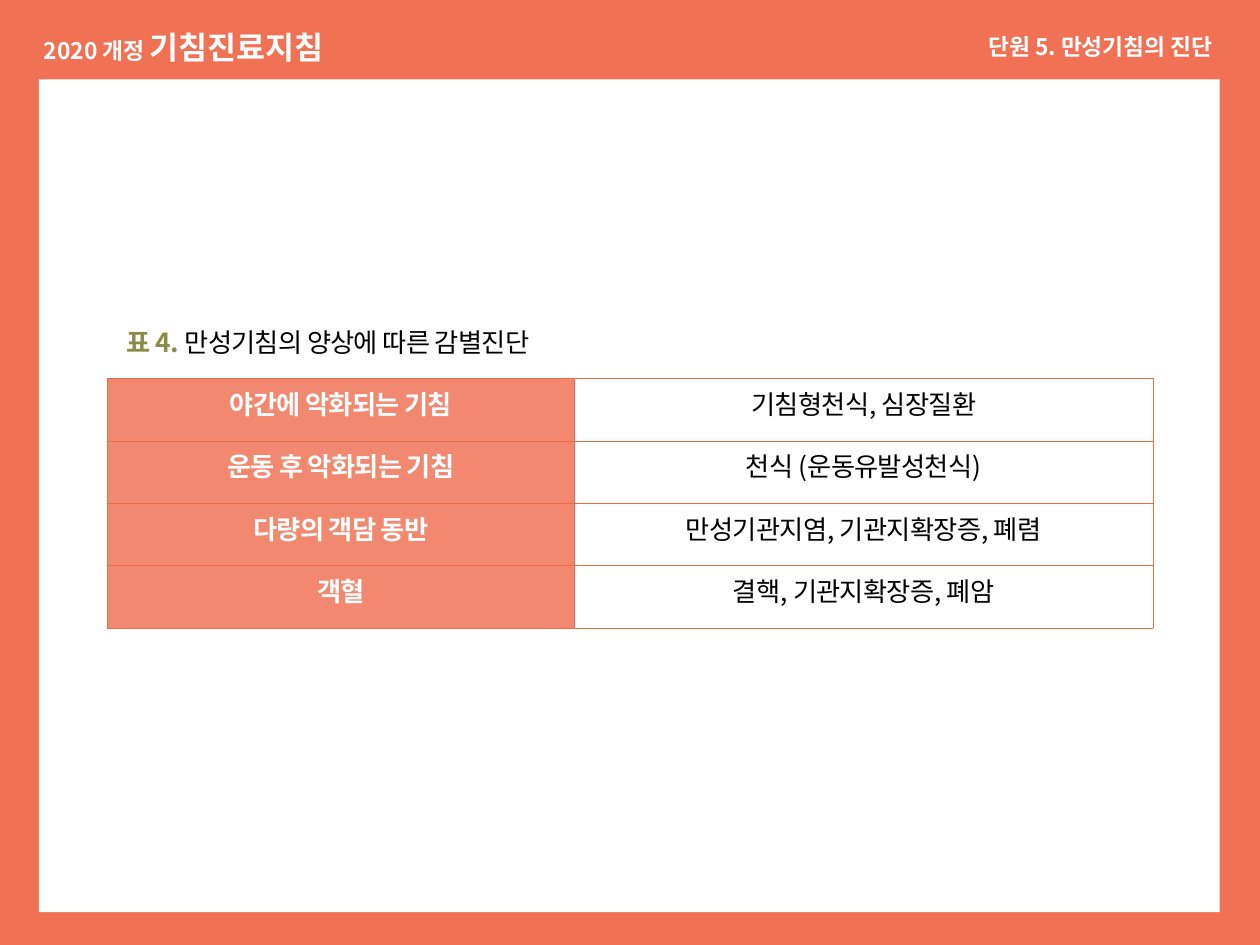
"""Build a slide with a table of differential diagnoses for chronic cough."""
from lxml import etree
from pptx import Presentation, util as u
from pptx.dml.color import RGBColor
from pptx.enum import shapes, text
from pptx.oxml.ns import qn

FONT = "Noto Sans CJK KR"
COLORS = {"frame": "F07154", "label": "F2886F", "line": "EF6A4B",
          "white": "FFFFFF", "black": "000000", "olive": "8B8C45"}
GUIDE = [("2020 개정 ", 13, "white", True), ("기침진료지침", 18, "white", True)]
CHAPTER = [("단원 5. 만성기침의 진단", 13, "white", True)]
CAPTION = [("표 4.", 15, "olive", True),
           (" 만성기침의 양상에 따른 감별진단", 15, "black", False)]
DIAGNOSES = [
    ("야간에 악화되는 기침", "기침형천식, 심장질환"),
    ("운동 후 악화되는 기침", "천식 (운동유발성천식)"),
    ("다량의 객담 동반", "만성기관지염, 기관지확장증, 폐렴"),
    ("객혈", "결핵, 기관지확장증, 폐암"),
]
COLUMNS = (3.71, 4.59)
ROW_HEIGHT = 0.494
ALIGN = text.PP_ALIGN


def color(name):
    return RGBColor.from_string(COLORS[name])


def write(para, spans, align, spacing=None):
    para.alignment = align
    for words, size, shade, bold in spans:
        span = para.add_run()
        span.text = words
        font = span.font
        font.name, font.size, font.bold = FONT, u.Pt(size), bold
        font.color.rgb = color(shade)
        props = span._r.get_or_add_rPr()
        etree.SubElement(props, qn("a:ea"), typeface=FONT)
        if spacing is not None:
            props.set("spc", str(spacing))


def add_heading(page, place, spans, align):
    box = page.shapes.add_textbox(*map(u.Inches, place))
    box.text_frame.word_wrap = True
    box.text_frame.auto_size = text.MSO_AUTO_SIZE.SHAPE_TO_FIT_TEXT
    write(box.text_frame.paragraphs[0], spans, align)


def set_borders(cell, borders):
    props = cell._tc.get_or_add_tcPr()
    for index, (side, (shade, width)) in enumerate(borders.items()):
        line = etree.Element(qn(f"a:ln{side}"), w=str(u.Pt(width)))
        fill = etree.SubElement(line, qn("a:solidFill"))
        etree.SubElement(fill, qn("a:srgbClr"), val=COLORS[shade])
        props.insert(index, line)


def fill_cell(cell, spans, align, anchor, fill=None):
    cell.margin_left = cell.margin_right = u.Inches(0.15)
    cell.margin_top = cell.margin_bottom = u.Inches(0.15)
    cell.vertical_anchor = anchor
    if fill:
        cell.fill.solid()
        cell.fill.fore_color.rgb = color(fill)
    else:
        cell.fill.background()
    para = cell.text_frame.paragraphs[0]
    para.line_spacing = u.Pt(14)
    write(para, spans, align, -40)


def add_diagnoses(page):
    rows = len(DIAGNOSES) + 1
    frame = page.shapes.add_table(
        rows, len(COLUMNS), u.Inches(0.85), u.Inches(2.51),
        u.Inches(sum(COLUMNS)), u.Inches(rows * ROW_HEIGHT))
    table = frame.table
    table.first_row = table.horz_banding = False
    for column, width in zip(table.columns, COLUMNS):
        column.width = u.Inches(width)
    for row in table.rows:
        row.height = u.Inches(ROW_HEIGHT)

    top, middle = text.MSO_ANCHOR.TOP, text.MSO_ANCHOR.MIDDLE
    caption = table.cell(0, 0)
    caption.merge(table.cell(0, 1))
    fill_cell(caption, CAPTION, ALIGN.JUSTIFY, top)
    table.cell(0, 1).fill.background()
    for index, (symptom, causes) in enumerate(DIAGNOSES, 1):
        fill_cell(table.cell(index, 0), [(symptom, 15, "white", True)],
                  ALIGN.CENTER, middle, "label")
        fill_cell(table.cell(index, 1), [(causes, 15, "black", False)],
                  ALIGN.CENTER, top)

    grid = dict.fromkeys("LRTB", ("line", 0.25))
    clear = dict.fromkeys("LRT", ("white", 1))
    for index in range(rows):
        for cell in table.rows[index].cells:
            set_borders(cell, grid if index else {**grid, **clear})


def main():
    deck = Presentation()
    deck.slide_width, deck.slide_height = u.Inches(10), u.Inches(7.5)
    page = deck.slides.add_slide(deck.slide_layouts[6])
    page.background.fill.solid()
    page.background.fill.fore_color.rgb = color("frame")

    panel = page.shapes.add_shape(
        shapes.MSO_SHAPE.RECTANGLE, *map(u.Inches, (0.31, 0.63, 9.37, 6.61)))
    panel.shadow.inherit = False
    panel.fill.solid()
    panel.fill.fore_color.rgb = color("white")
    panel.line.fill.background()

    add_heading(page, (0.25, 0.17, 4.84, 0.4), GUIDE, ALIGN.LEFT)
    add_heading(page, (4.88, 0.21, 4.84, 0.32), CHAPTER, ALIGN.RIGHT)
    add_diagnoses(page)
    deck.save("out.pptx")


if __name__ == "__main__":
    main()
